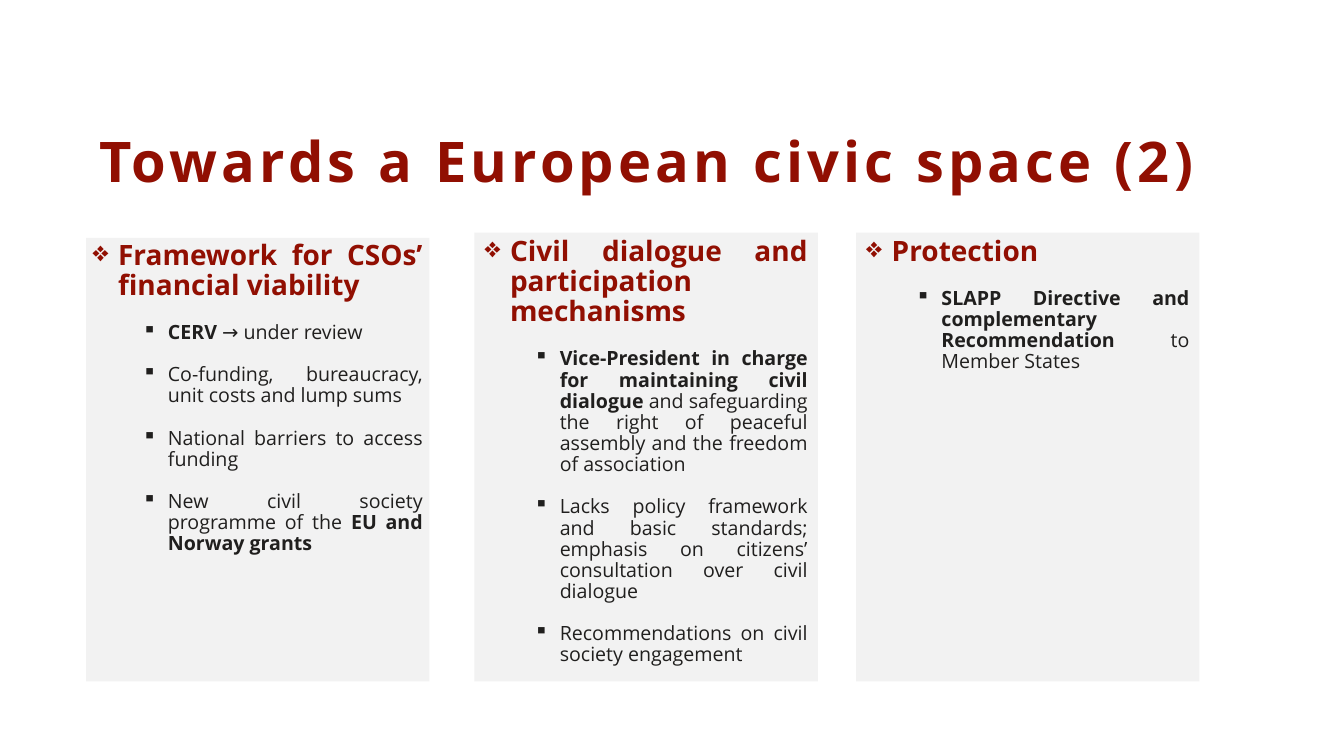
from dataclasses import dataclass

from lxml import etree
from pptx import Presentation
from pptx.dml.color import RGBColor
from pptx.enum.shapes import MSO_SHAPE
from pptx.enum.text import MSO_ANCHOR, PP_ALIGN
from pptx.oxml.ns import qn
from pptx.util import Inches, Pt

RECT = MSO_SHAPE.RECTANGLE
TOP = MSO_ANCHOR.TOP
MIDDLE = MSO_ANCHOR.MIDDLE
LEFT = PP_ALIGN.LEFT
JUSTIFY = PP_ALIGN.JUSTIFY

FACE = "Open Sans"
RED = "910F02"
INK = "201F1E"
GREY = "F2F2F2"
BASE = 10.14
WIDTH = 5.11


@dataclass
class Part:
    text: str
    bold: bool = False


@dataclass
class Style:
    mark: str
    level: int
    left: float
    size: int
    color: str
    before: float


@dataclass
class Panel:
    left: float
    top: float
    side: float
    edge: float
    head: str
    items: list[list[Part]]


HEAD = Style("❖", 0, 0.38, 30, RED, 0)
ITEM = Style("▪", 1, 1.12, 21, INK, 7.5)

PANELS = [
    Panel(1.28, 3.54, 0.1, 0.05, "Framework for CSOs’ financial viability", [
        [Part("CERV ", True), Part("→ under review")],
        [Part("Co-funding, bureaucracy, unit costs and lump sums")],
        [Part("National barriers to access funding")],
        [Part("New civil society programme of the "),
         Part("EU and Norway grants", True)],
    ]),
    Panel(7.06, 3.46, 0.15, 0.07, "Civil dialogue and participation mechanisms", [
        [Part("Vice-President in charge for maintaining civil dialogue", True),
         Part(" and safeguarding the right of peaceful assembly "
              "and the freedom of association")],
        [Part("Lacks policy framework and basic standards; "
              "emphasis on citizens’ consultation over civil dialogue")],
        [Part("Recommendations on civil society engagement")],
    ]),
    Panel(12.74, 3.46, 0.15, 0.07, "Protection", [
        [Part("SLAPP Directive and complementary Recommendation ", True),
         Part("to Member States")],
    ]),
]


def tint(code: str) -> RGBColor:
    return RGBColor.from_string(code)


def apply(target, values: dict) -> None:
    for name, value in values.items():
        setattr(target, name, value)


def set_frame(frame, anchor, side: float, edge: float) -> None:
    apply(frame, {
        "word_wrap": True, "vertical_anchor": anchor,
        "margin_left": Inches(side), "margin_right": Inches(side),
        "margin_top": Inches(edge), "margin_bottom": Inches(edge),
    })


def add_run(para, part: Part, size: int, color: str):
    run = para.add_run()
    run.text = part.text
    apply(run.font, {"name": FACE, "size": Pt(size), "bold": part.bold})
    run.font.color.rgb = tint(color)
    return run


def fill_para(para, parts: list[Part], style: Style) -> None:
    props = para._p.get_or_add_pPr()
    props.set("marL", str(Inches(style.left)))
    props.set("indent", str(Inches(-0.38)))
    etree.SubElement(props, qn("a:buChar")).set("char", style.mark)
    apply(para, {
        "level": style.level, "alignment": JUSTIFY, "line_spacing": 0.9,
        "space_before": Pt(style.before), "space_after": Pt(15),
    })
    for part in parts:
        add_run(para, part, style.size, style.color)


def add_panel(slide, panel: Panel) -> None:
    box = slide.shapes.add_shape(
        RECT, Inches(panel.left), Inches(panel.top),
        Inches(WIDTH), Inches(BASE - panel.top))
    box.shadow.inherit = False
    box.fill.solid()
    box.fill.fore_color.rgb = tint(GREY)
    box.line.fill.background()
    frame = box.text_frame
    set_frame(frame, TOP, panel.side, panel.edge)
    fill_para(frame.paragraphs[0], [Part(panel.head, True)], HEAD)
    for parts in panel.items:
        fill_para(frame.add_paragraph(), parts, ITEM)


def add_title(slide, text: str) -> None:
    box = slide.shapes.add_textbox(
        Inches(1.38), Inches(1.36), Inches(17.25), Inches(2.17))
    set_frame(box.text_frame, MIDDLE, 0.1, 0.05)
    para = box.text_frame.paragraphs[0]
    apply(para, {"alignment": LEFT, "line_spacing": 0.9})
    run = add_run(para, Part(text, True), 60, RED)
    run._r.get_or_add_rPr().set("spc", "450")


def main() -> None:
    deck = Presentation()
    apply(deck, {"slide_width": Inches(20), "slide_height": Inches(11.25)})
    slide = deck.slides.add_slide(deck.slide_layouts[6])
    add_title(slide, "Towards a European civic space (2)")
    for panel in PANELS:
        add_panel(slide, panel)
    deck.save("out.pptx")


if __name__ == "__main__":
    main()
